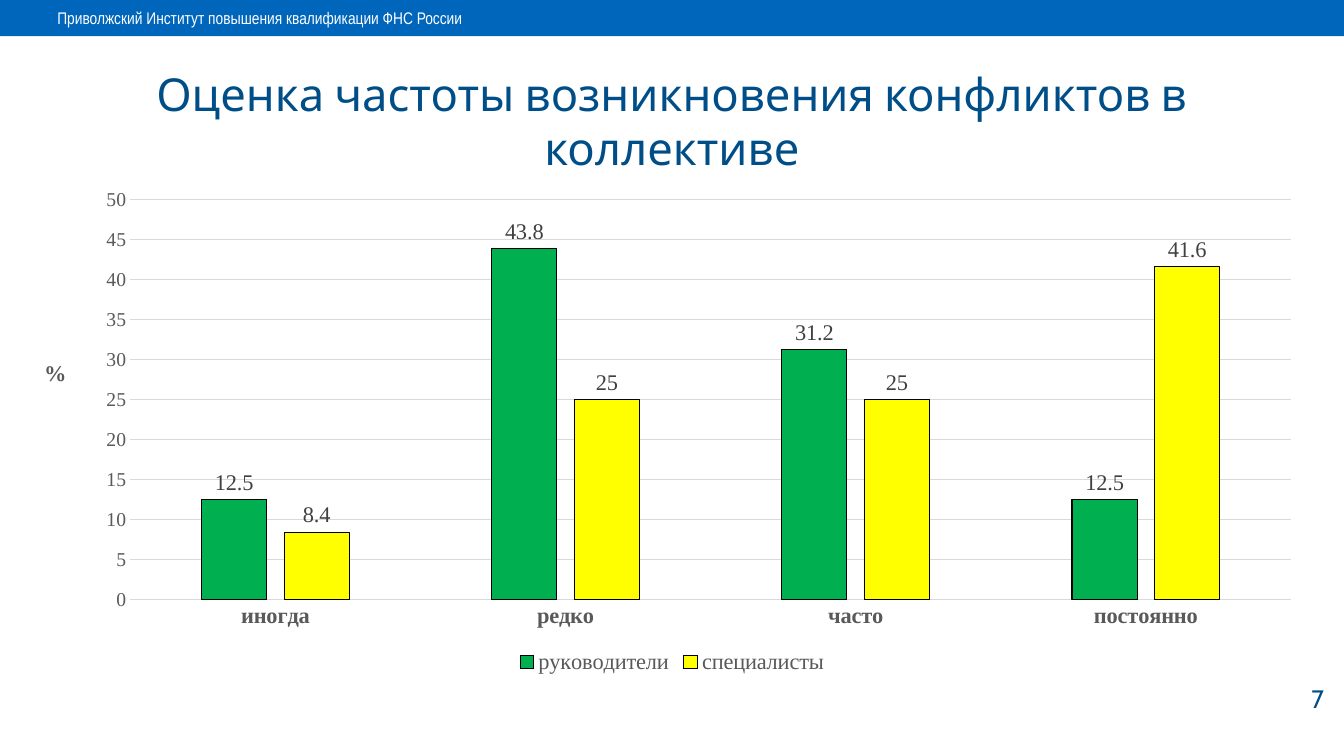
from dataclasses import dataclass

from lxml import etree
from pptx import Presentation
from pptx.chart.data import CategoryChartData
from pptx.dml.color import RGBColor
from pptx.enum.chart import XL_CHART_TYPE, XL_LABEL_POSITION, XL_LEGEND_POSITION, XL_TICK_MARK
from pptx.enum.shapes import MSO_SHAPE
from pptx.enum.text import MSO_ANCHOR, PP_ALIGN
from pptx.oxml.ns import qn
from pptx.util import Inches, Pt

CLUSTERED = XL_CHART_TYPE.COLUMN_CLUSTERED
OUTSIDE_END = XL_LABEL_POSITION.OUTSIDE_END
LEGEND_BOTTOM = XL_LEGEND_POSITION.BOTTOM
NO_TICKS = XL_TICK_MARK.NONE
MIDDLE = MSO_ANCHOR.MIDDLE
LEFT, CENTER, RIGHT = PP_ALIGN.LEFT, PP_ALIGN.CENTER, PP_ALIGN.RIGHT

# Content
INSTITUTE = "Приволжский Институт повышения квалификации ФНС России"
TITLE = "Оценка частоты возникновения конфликтов в коллективе"
PAGE = "7"
UNIT = "%"
FREQUENCIES = ["иногда", "редко", "часто", "постоянно"]
RATINGS = {
    "руководители": [12.5, 43.8, 31.2, 12.5],
    "специалисты": [8.4, 25, 25, 41.6],
}


@dataclass(frozen=True)
class Theme:
    band: str = "0066BC"
    band_text: str = "FFFFFF"
    heading: str = "004E88"
    axis_text: str = "595959"
    label_text: str = "404040"
    grid: str = "D9D9D9"
    outline: str = "000000"
    columns: tuple = ("00B050", "FFFF00")
    band_font: str = "Arial Narrow"
    heading_font: str = "Cabin"
    chart_font: str = "Times New Roman"
    band_size: float = 12
    page_size: float = 18
    title_size: float = 32.4
    chart_size: float = 16
    scale_size: float = 14
    hairline: float = 0.75


THEME = Theme()

# Layout in inches; the title and the chart share one column
WIDTH, HEIGHT = 13.33, 7.5
MARGIN = 0.27
BODY_WIDTH = WIDTH - 2 * MARGIN
BAND_BOX = (0, 0, WIDTH, 0.36)
INSTITUTE_BOX = (0.47, 0.03, 12.18, 0.3)
PAGE_BOX = (12.34, 6.73, 0.89, 0.4)
TITLE_BOX = (MARGIN, 0.76, BODY_WIDTH, 0.87)
CHART_BOX = (MARGIN, 1.78, BODY_WIDTH, 4.96)
# Shares of the chart's size
PLOT_SHARE = {"x": 0.08, "y": 0.04, "w": 0.9, "h": 0.8}
UNIT_SHARE = {"x": 0.01, "y": 0.35}


def inches(box):
    return [Inches(length) for length in box]


def color(value):
    return RGBColor.from_string(value)


def style(font, name, size, ink, bold=False):
    font.name, font.size, font.bold = name, Pt(size), bold
    font.color.rgb = color(ink)


def write(shape, text, name, size, ink, align):
    frame = shape.text_frame
    frame.word_wrap = True
    frame.vertical_anchor = MIDDLE
    frame.text = text
    paragraph = frame.paragraphs[0]
    paragraph.alignment = align
    style(paragraph.runs[0].font, name, size, ink)


def place(element, position, shares, inner=False):
    """Give a chart part a manual layout."""
    layout = element.find(qn("c:layout"))
    if layout is None:
        layout = etree.Element(qn("c:layout"))
        element.insert(position, layout)
    manual = etree.SubElement(layout, qn("c:manualLayout"))
    settings = {"layoutTarget": "inner"} if inner else {}
    settings.update(xMode="edge", yMode="edge", **shares)
    for tag, value in settings.items():
        etree.SubElement(manual, qn("c:" + tag)).set("val", str(value))


def add_header(slide):
    band = slide.shapes.add_shape(MSO_SHAPE.RECTANGLE, *inches(BAND_BOX))
    band.shadow.inherit = False
    band.fill.solid()
    band.fill.fore_color.rgb = color(THEME.band)
    band.line.fill.background()
    write(slide.shapes.add_textbox(*inches(INSTITUTE_BOX)), INSTITUTE,
          THEME.band_font, THEME.band_size, THEME.band_text, LEFT)
    write(slide.shapes.add_textbox(*inches(PAGE_BOX)), PAGE,
          THEME.heading_font, THEME.page_size, THEME.heading, RIGHT)


def add_title(slide):
    title = slide.shapes.title
    title.left, title.top, title.width, title.height = inches(TITLE_BOX)
    write(title, TITLE, THEME.heading_font, THEME.title_size, THEME.heading, CENTER)


def format_axes(chart):
    frequency, share = chart.category_axis, chart.value_axis
    for axis in (frequency, share):
        axis.major_tick_mark = axis.minor_tick_mark = NO_TICKS
    style(frequency.tick_labels.font, THEME.chart_font, THEME.chart_size, THEME.axis_text, True)
    style(share.tick_labels.font, THEME.chart_font, THEME.scale_size, THEME.axis_text)
    share.minimum_scale, share.maximum_scale, share.major_unit = 0, 50, 5
    share.tick_labels.number_format = "General"
    share.tick_labels.number_format_is_linked = False
    share.format.line.fill.background()
    for line in (frequency.format.line, share.major_gridlines.format.line):
        line.color.rgb = color(THEME.grid)
        line.width = Pt(THEME.hairline)

    # Upright unit beside the scale
    unit = share.axis_title
    unit.text_frame.text = UNIT
    style(unit.text_frame.paragraphs[0].runs[0].font,
          THEME.chart_font, THEME.chart_size, THEME.axis_text, True)
    body = next(unit.text_frame._txBody.iter(qn("a:bodyPr")))
    body.set("rot", "0")
    body.set("vert", "horz")
    place(unit._element, 1, UNIT_SHARE)


def add_ratings(slide):
    data = CategoryChartData()
    data.categories = FREQUENCIES
    for group, values in RATINGS.items():
        data.add_series(group, values)
    chart = slide.shapes.add_chart(CLUSTERED, *inches(CHART_BOX), data).chart
    chart.has_title = False
    style(chart.font, THEME.chart_font, 10, THEME.outline)
    format_axes(chart)
    place(chart._chartSpace.chart.plotArea, 0, PLOT_SHARE, inner=True)

    chart.has_legend = True
    chart.legend.position = LEGEND_BOTTOM
    chart.legend.include_in_layout = False
    style(chart.legend.font, THEME.chart_font, THEME.chart_size, THEME.axis_text)

    plot = chart.plots[0]
    plot.vary_by_categories = False
    plot.gap_width, plot.overlap = 219, -27
    for group, fill in zip(plot.series, THEME.columns):
        group.format.fill.solid()
        group.format.fill.fore_color.rgb = color(fill)
        group.format.line.color.rgb = color(THEME.outline)
        group.format.line.width = Pt(THEME.hairline)
        labels = group.data_labels
        labels.show_value = True
        labels.position = OUTSIDE_END
        style(labels.font, THEME.chart_font, THEME.chart_size, THEME.label_text)


def main():
    deck = Presentation()
    deck.slide_width, deck.slide_height = Inches(WIDTH), Inches(HEIGHT)
    slide = deck.slides.add_slide(deck.slide_layouts[5])
    add_header(slide)
    add_title(slide)
    add_ratings(slide)
    deck.save("out.pptx")


if __name__ == "__main__":
    main()
